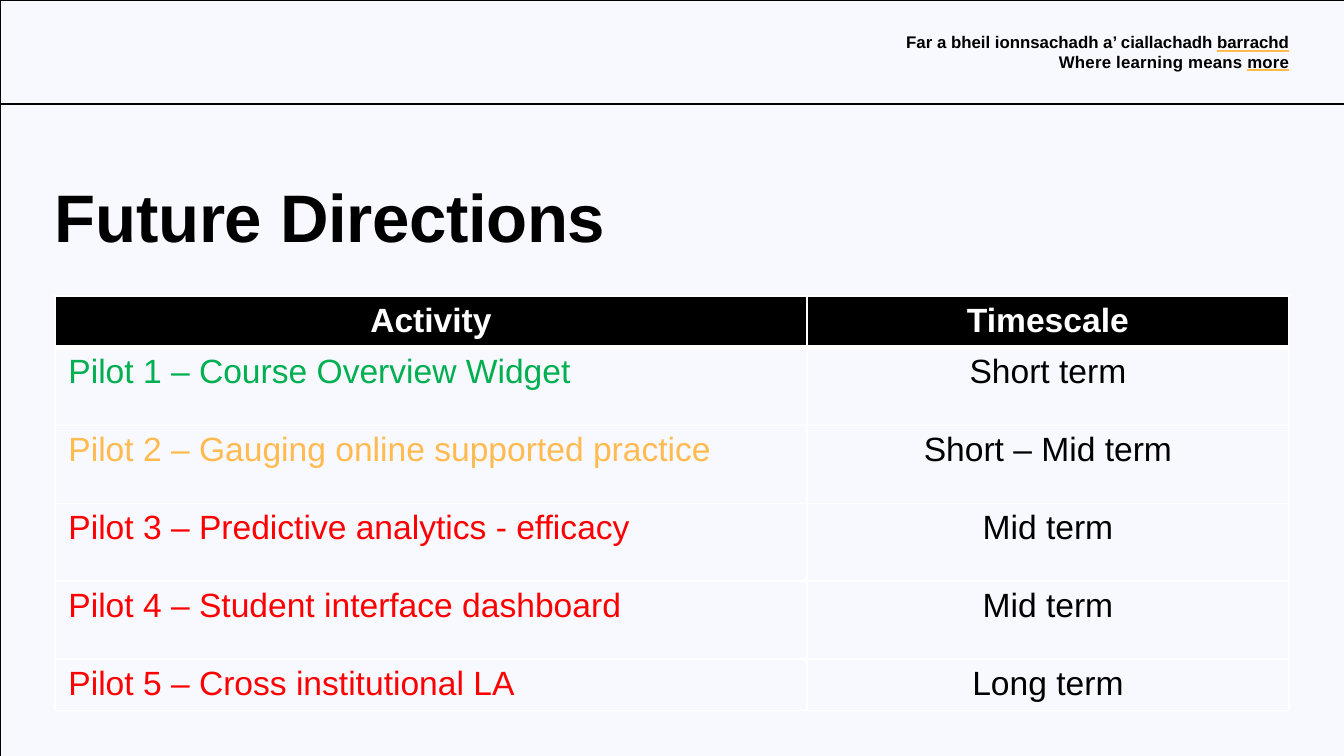
import pptx
import pptx.util
import pptx.dml.color
import pptx.enum.shapes
import pptx.enum.text
import pptx.oxml
import pptx.oxml.ns
import pptx.oxml.xmlchemy

RGB = pptx.dml.color.RGBColor
ALIGN = pptx.enum.text.PP_ALIGN
BLACK = RGB(0x00, 0x00, 0x00)
WHITE = RGB(0xFF, 0xFF, 0xFF)
PALE = RGB(0xF8, 0xF8, 0xFF)
GREEN = RGB(0x00, 0xB0, 0x50)
AMBER = RGB(0xFF, 0xBB, 0x50)
RED = RGB(0xFF, 0x00, 0x00)

FONT = "Arial"
SCALE = 914400 / 134.4
WIDTH, HEIGHT = 1344, 756
HEADS = ("Activity", "Timescale")
PILOTS = [
    ("Pilot 1 – Course Overview Widget", "Short term", GREEN),
    ("Pilot 2 – Gauging online supported practice", "Short – Mid term", AMBER),
    ("Pilot 3 – Predictive analytics - efficacy", "Mid term", RED),
    ("Pilot 4 – Student interface dashboard", "Mid term", RED),
    ("Pilot 5 – Cross institutional LA", "Long term", RED),
]


def px(*sizes):
    return [pptx.util.Emu(round(size * SCALE)) for size in sizes]


def style(para, size, color, bold=False, align=ALIGN.LEFT, space=0):
    """Format a paragraph and its runs; space is in hundredths of a point."""
    para.alignment = align
    for run in para.runs:
        run.font.name = FONT
        run.font.size = pptx.util.Pt(size)
        run.font.bold = bold
        run.font.color.rgb = color
        if space:
            run.font._element.set("spc", str(space))


def clear(frame):
    """Remove the insets of a text frame and anchor it at the top."""
    frame.margin_left = frame.margin_right = 0
    frame.margin_top = frame.margin_bottom = 0
    frame.vertical_anchor = pptx.enum.text.MSO_ANCHOR.TOP
    frame.word_wrap = True


def rule(slide, left, right, y, color):
    kind = pptx.enum.shapes.MSO_CONNECTOR.STRAIGHT
    line = slide.shapes.add_connector(kind, *px(left, y, right, y))
    line.line.color.rgb = color
    line.line.width = pptx.util.Pt(0.75)
    props = line._element.spPr
    props.append(pptx.oxml.xmlchemy.OxmlElement("a:effectLst"))


def border(cell, side, width):
    line = pptx.oxml.parse_xml(
        f'<a:ln{side} {pptx.oxml.ns.nsdecls("a")} w="{pptx.util.Pt(width)}">'
        f'<a:solidFill><a:srgbClr val="{WHITE}"/></a:solidFill></a:ln{side}>'
    )
    cell._tc.get_or_add_tcPr().append(line)


def add_back(slide, box):
    kind = pptx.enum.shapes.MSO_SHAPE.RECTANGLE
    back = slide.shapes.add_shape(kind, *px(*box))
    back.shadow.inherit = False
    back.fill.solid()
    back.fill.fore_color.rgb = PALE
    back.line.color.rgb = BLACK
    back.line.width = pptx.util.Pt(0.25)
    slide.shapes._spTree.insert(2, back._element)


def add_motto(slide, box):
    left, top, width, height = box
    right = left + width
    frame = slide.shapes.add_textbox(*px(*box)).text_frame
    clear(frame)
    frame.text = ("Far a bheil ionnsachadh a’ ciallachadh barrachd\n"
                  "Where learning means more")
    for para, space in zip(frame.paragraphs, (0, 10)):
        style(para, 9, BLACK, True, ALIGN.RIGHT, space)
    rule(slide, right - 72, right, top + 19, AMBER)
    rule(slide, right - 42, right, top + 38, AMBER)


def add_title(slide, box):
    title = slide.shapes.title
    title.left, title.top, title.width, title.height = px(*box)
    frame = title.text_frame
    frame.text = "Future Directions"
    clear(frame)
    frame.auto_size = pptx.enum.text.MSO_AUTO_SIZE.NONE
    para = frame.paragraphs[0]
    para.line_spacing = pptx.util.Pt(52)
    style(para, 36, BLACK, True, space=-20)


def fill_cell(cell, text, color, fill, bold, align, base):
    cell.text = text
    cell.margin_top, cell.margin_bottom = px(6, 5)
    style(cell.text_frame.paragraphs[0], 18, color, bold, align)
    for side, width in (("L", 1), ("R", 1), ("T", 1), ("B", base)):
        border(cell, side, width)
    cell.fill.solid()
    cell.fill.fore_color.rgb = fill


def add_plan(slide, box):
    count = len(PILOTS) + 1
    table = slide.shapes.add_table(count, 2, *px(*box)).table
    width, height = box[2:]
    first, edge = 752, 50
    for col, size in zip(table.columns, px(first, width - first)):
        col.width = size
    middle = (height - 2 * edge) / (count - 2)
    sizes = px(edge, *[middle] * (count - 2), edge)
    for row, size in zip(table.rows, sizes):
        row.height = size
    for col, head in enumerate(HEADS):
        fill_cell(table.cell(0, col), head, WHITE, BLACK, True,
                  ALIGN.CENTER, 3)
    for row, (name, term, color) in enumerate(PILOTS, 1):
        fill_cell(table.cell(row, 0), name, color, PALE, False,
                  ALIGN.LEFT, 1)
        fill_cell(table.cell(row, 1), term, BLACK, PALE, False,
                  ALIGN.CENTER, 1)


def main():
    deck = pptx.Presentation()
    deck.slide_width, deck.slide_height = px(WIDTH, HEIGHT)
    slide = deck.slides.add_slide(deck.slide_layouts[5])
    add_back(slide, (0, 0, WIDTH, HEIGHT))
    rule(slide, 0, WIDTH, 104, BLACK)
    add_motto(slide, (904, 32, 385, 60))
    add_title(slide, (55, 159, 560, 200))
    add_plan(slide, (55, 296, 1234, 412))
    deck.save("out.pptx")


if __name__ == "__main__":
    main()
